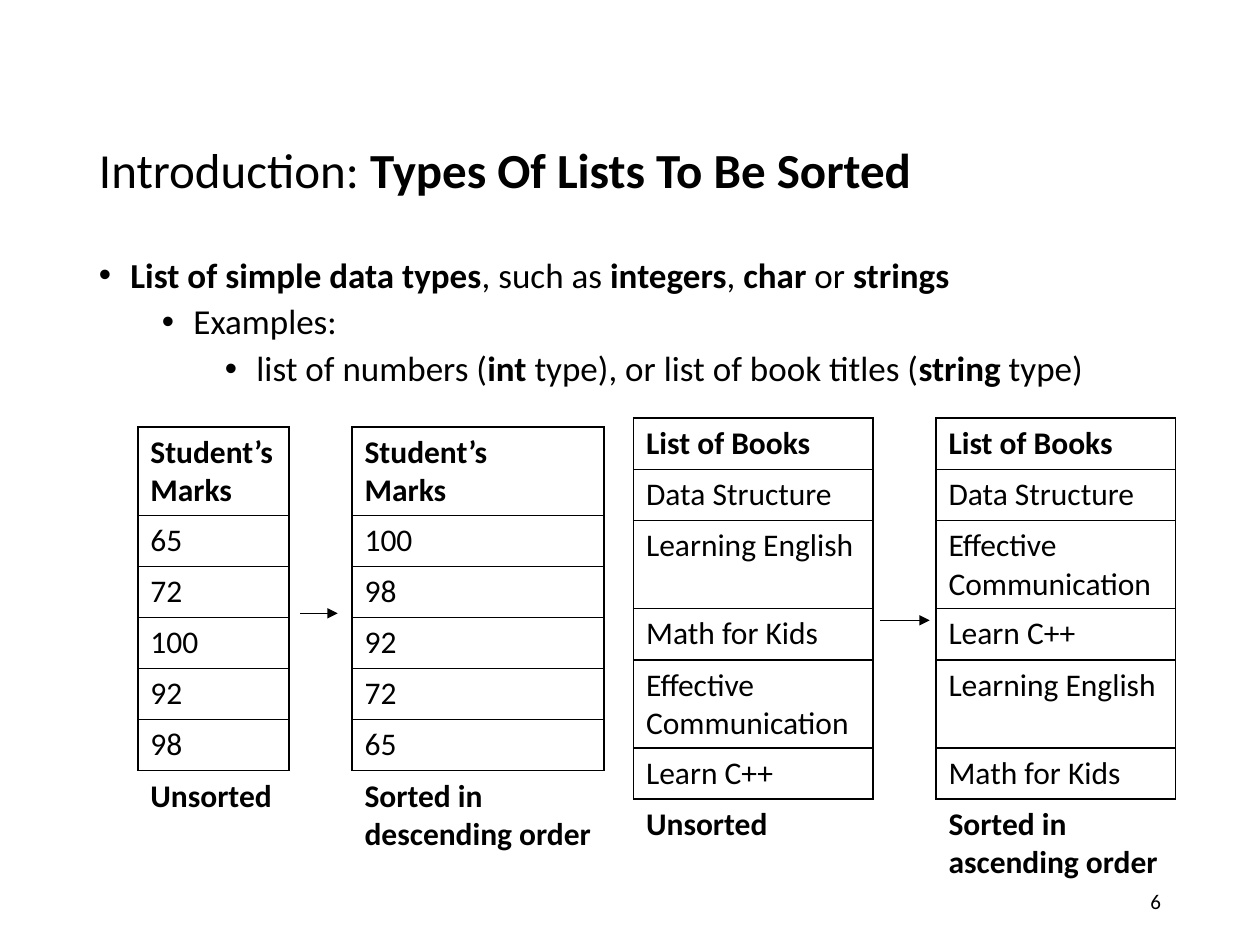
from dataclasses import dataclass

from lxml.etree import SubElement
from pptx import Presentation
from pptx.dml.color import RGBColor
from pptx.enum.shapes import MSO_CONNECTOR
from pptx.enum.text import MSO_ANCHOR, PP_ALIGN
from pptx.oxml.ns import qn
from pptx.util import Pt


@dataclass(frozen=True)
class Theme:
    """Colours, font and type sizes of the slide."""
    font: str = "Calibri"
    ink: RGBColor = RGBColor(0, 0, 0)
    title: int = 28
    body: int = 20
    table: int = 18
    number: int = 12
    border: float = 1
    arrow: float = 0.5


THEME = Theme()
ROW_HEIGHT = 29.2
INDENT = 18

BULLETS = [
    [("List of simple data types", True), (", such as ", False), ("integers", True),
     (", ", False), ("char", True), (" or ", False), ("strings", True)],
    [("Examples:", False)],
    [("list of numbers (", False), ("int ", True),
     ("type), or list of book titles (", False), ("string", True), (" type)", False)],
]
MARKS = [
    ("Student’s\nMarks", "Student’s\nMarks"),
    ("65", "100"), ("72", "98"), ("100", "92"), ("92", "72"), ("98", "65"),
    ("Unsorted", "Sorted in descending order"),
]
BOOKS = [
    ("List of Books", "List of Books"),
    ("Data Structure", "Data Structure"),
    ("Learning English", "Effective\nCommunication"),
    ("Math for Kids", "Learn C++"),
    ("Effective\nCommunication", "Learning English"),
    ("Learn C++", "Math for Kids"),
    ("Unsorted", "Sorted in ascending order"),
]


def add_runs(p, runs, size):
    """Add (text, bold) runs to a paragraph."""
    for text, bold in runs:
        r = p.add_run()
        r.text = text
        r.font.name, r.font.size, r.font.bold = THEME.font, Pt(size), bold
        r.font.color.rgb = THEME.ink


def add_text_frame(s, box, anchor):
    """Place a wrapping text box and return its text frame."""
    tf = s.shapes.add_textbox(*map(Pt, box)).text_frame
    tf.word_wrap = True
    tf.vertical_anchor = anchor
    return tf


def add_title(s, box):
    """Place the slide title."""
    p = add_text_frame(s, box, MSO_ANCHOR.MIDDLE).paragraphs[0]
    p.line_spacing = 0.9
    add_runs(p, [("Introduction: ", False), ("Types Of Lists To Be Sorted", True)], THEME.title)


def add_bullets(s, box):
    """Place the bullets, each one level below the one before."""
    tf = add_text_frame(s, box, MSO_ANCHOR.TOP)
    for level, runs in enumerate(BULLETS):
        p = tf.add_paragraph() if level else tf.paragraphs[0]
        p.level = level
        pPr = p._p.get_or_add_pPr()
        pPr.set("marL", str(Pt(INDENT * (1 + 2 * level))))
        pPr.set("indent", str(-Pt(INDENT)))
        SubElement(pPr, qn("a:buFont"), typeface="Arial")
        SubElement(pPr, qn("a:buChar"), char="•")
        p.line_spacing = 0.9
        p.space_before = Pt(5 if level else 0)
        add_runs(p, runs, THEME.body)


def add_number(s, box):
    """Place the slide number."""
    p = add_text_frame(s, box, MSO_ANCHOR.MIDDLE).paragraphs[0]
    p.alignment = PP_ALIGN.RIGHT
    add_runs(p, [("6", False)], THEME.number)


def style_cell(cell, sides):
    """Clear the cell fill and draw borders on the given sides only."""
    tcPr = cell._tc.get_or_add_tcPr()
    for side in "LRTB":
        ln = SubElement(tcPr, qn(f"a:ln{side}"), w=str(Pt(THEME.border)))
        if side in sides:
            fill = SubElement(ln, qn("a:solidFill"))
            SubElement(fill, qn("a:srgbClr"), val=str(THEME.ink))
        else:
            SubElement(ln, qn("a:noFill"))
    cell.fill.background()


def add_sort_table(s, box, widths, rows):
    """Place an unsorted and a sorted list side by side with captions below."""
    last = len(rows) - 1
    frame = s.shapes.add_table(len(rows), len(widths), *map(Pt, box))
    table = frame.table
    table.first_row = table.horz_banding = False
    for col, width in zip(table.columns, widths):
        col.width = Pt(width)
    for i, row in enumerate(rows):
        table.rows[i].height = Pt(ROW_HEIGHT)
        style_cell(table.cell(i, 1), "" if i == last else "LR")
        for j, text in zip((0, 2), row):
            cell = table.cell(i, j)
            style_cell(cell, "T" if i == last else "LRTB")
            tf = cell.text_frame
            for k, line in enumerate(text.split("\n")):
                p = tf.add_paragraph() if k else tf.paragraphs[0]
                add_runs(p, [(line, i in (0, last))], THEME.table)
    table.cell(0, 1).merge(table.cell(last - 1, 1))
    frame.height = Pt(box[3])


def add_arrow(s, x, y, length):
    """Draw a thin arrow pointing right."""
    line = s.shapes.add_connector(MSO_CONNECTOR.STRAIGHT, Pt(x), Pt(y), Pt(x + length), Pt(y))
    line.line.color.rgb = THEME.ink
    line.line.width = Pt(THEME.arrow)
    SubElement(line.line._get_or_add_ln(), qn("a:tailEnd"), type="triangle")
    SubElement(line._element.spPr, qn("a:effectLst"))


def add_sort_example(s, box, widths, rows, arrow):
    """Place a sort table and its arrow, given as offset x, offset y and length."""
    add_sort_table(s, box, widths, rows)
    dx, dy, length = arrow
    add_arrow(s, box[0] + dx, box[1] + dy, length)


def main():
    """Build and save the slide."""
    prs = Presentation()
    prs.slide_width, prs.slide_height = Pt(720), Pt(540)
    s = prs.slides.add_slide(prs.slide_layouts[6])
    add_title(s, (49.5, 64, 621, 69))
    add_bullets(s, (49.5, 144, 653, 343))
    add_number(s, (508.5, 500.5, 162, 28.75))
    add_sort_example(s, (78.75, 244, 266.4, 247), (86.4, 36, 144), MARKS, (92.75, 106.5, 21.5))
    add_sort_example(s, (362, 239, 309.6, 268), (136.8, 36, 136.8), BOOKS, (140.75, 115.5, 28.5))
    prs.save("out.pptx")


if __name__ == "__main__":
    main()
